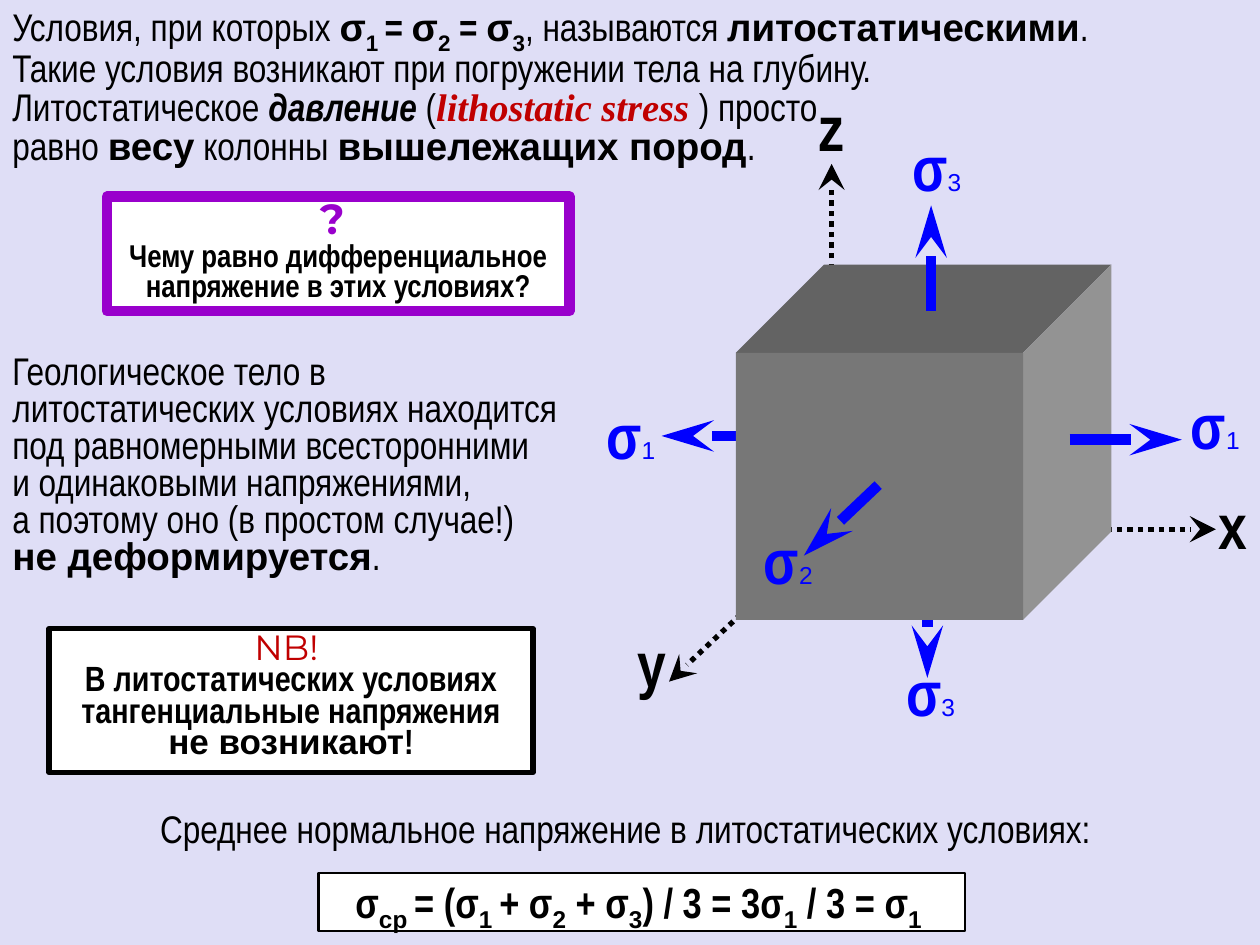
from lxml.etree import SubElement
from pptx import Presentation
from pptx.dml.color import RGBColor
from pptx.enum.dml import MSO_LINE
from pptx.enum.shapes import MSO_CONNECTOR, MSO_SHAPE
from pptx.enum.text import MSO_ANCHOR, MSO_AUTO_SIZE, PP_ALIGN
from pptx.oxml.ns import qn
from pptx.util import Inches, Pt

# The grid has 100 columns and 75 rows
COLS, ROWS = 100, 75
WIDTH, HEIGHT = Inches(10), Inches(7.5)

BACK = RGBColor(0xDF, 0xDE, 0xF6)
BLACK = RGBColor(0, 0, 0)
WHITE = RGBColor(0xFF, 0xFF, 0xFF)
RED = RGBColor(0xC0, 0, 0)
BLUE = RGBColor(0, 0, 0xFF)
PURPLE = RGBColor(0x99, 0, 0xCC)
FRONT = RGBColor(0x77, 0x77, 0x77)
TOP = RGBColor(0x63, 0x63, 0x63)
SIDE = RGBColor(0x93, 0x93, 0x93)

# Run formats; "sub" marks a subscript
PLAIN = {"name": "Arial Narrow"}
THICK = {"name": "Arial Narrow", "bold": True}
ARIAL = {"name": "Arial", "bold": True}
SUB = {**ARIAL, "sub": True}
SLANT = {**THICK, "italic": True}
TERM = {"name": "Times New Roman", "bold": True, "italic": True, "color": RED}
HEAD = {"name": "Montserrat"}

INTRO = [
    [("Условия, при которых ", PLAIN), ("σ", ARIAL), ("1 ", SUB), ("= ", THICK),
     ("σ", ARIAL), ("2", SUB), (" = ", THICK), ("σ", ARIAL), ("3", SUB),
     (", называются ", PLAIN), ("литостатическими", ARIAL), (".", PLAIN)],
    [("Такие условия возникают при погружении тела на глубину.", PLAIN)],
    [("Литостатическое ", PLAIN), ("давление ", SLANT), ("(", PLAIN),
     ("lithostatic stress ", TERM), (") просто", PLAIN)],
    [("равно ", PLAIN), ("весу", ARIAL), (" колонны ", PLAIN),
     ("вышележащих пород", ARIAL), (".", PLAIN)],
]
BODY = [
    [("Геологическое тело в", PLAIN)],
    [("литостатических условиях находится под равномерными всесторонними", PLAIN)],
    [("и одинаковыми напряжениями,", PLAIN)],
    [("а поэтому оно (в простом случае!)", PLAIN)],
    [("не деформируется", ARIAL), (".", PLAIN)],
]
ASK = [
    [("? ", {**HEAD, "bold": True, "color": PURPLE, "size": Pt(24)})],
    [("Чему равно дифференциальное напряжение в этих условиях?", THICK)],
]
NOTE = [
    [("NB! ", {**HEAD, "color": RED})],
    [("В литостатических условиях тангенциальные напряжения ", THICK),
     ("не возникают", ARIAL), ("!", THICK)],
]
MEAN = [[("Среднее нормальное напряжение в литостатических условиях: ", PLAIN)]]
SUM = [[("σ", THICK), ("ср ", SUB), ("= (σ", THICK), ("1 ", SUB), ("+ σ", THICK),
        ("2", SUB), (" + σ", THICK), ("3", SUB), (") / 3 = 3σ", THICK), ("1", SUB),
        (" / 3 = σ", THICK), ("1 ", SUB)]]


def col(n):
    return round(WIDTH * n / COLS)


def row(n):
    return round(HEIGHT * n / ROWS)


def area(left, top, wide, high):
    return col(left), row(top), col(wide), row(high)


def write(shape, lines, size, space=1.0, align=PP_ALIGN.LEFT, wrap=True):
    frame = shape.text_frame
    frame.word_wrap = wrap
    frame.auto_size = MSO_AUTO_SIZE.SHAPE_TO_FIT_TEXT
    frame.vertical_anchor = MSO_ANCHOR.TOP
    for i, line in enumerate(lines):
        para = frame.add_paragraph() if i else frame.paragraphs[0]
        para.alignment, para.line_spacing = align, space
        for text, style in line:
            run = para.add_run()
            run.text = text
            form = {"size": Pt(size), "color": BLACK, **style}
            run.font.color.rgb = form.pop("color")
            if form.pop("sub", False):
                run.font._element.set("baseline", "-25000")
            for key, value in form.items():
                setattr(run.font, key, value)


def add_text(shapes, box, *args, **opts):
    write(shapes.add_textbox(*area(*box)), *args, **opts)


def add_panel(shapes, box, color, width, lines, size, space):
    panel = shapes.add_shape(MSO_SHAPE.RECTANGLE, *area(*box))
    paint(panel, WHITE)
    panel.line.color.rgb, panel.line.width = color, Pt(width)
    write(panel, lines, size, space, PP_ALIGN.CENTER)


def paint(shape, color):
    shape.shadow.inherit = False
    shape.fill.solid()
    shape.fill.fore_color.rgb = color
    shape.line.fill.background()


def add_arrow(shapes, ends, color, width, dash=None, head="med"):
    x1, y1, x2, y2 = ends
    arrow = shapes.add_connector(MSO_CONNECTOR.STRAIGHT, col(x1), row(y1), col(x2), row(y2))
    form = {"width": Pt(width), "dash_style": dash}
    for key, value in form.items():
        setattr(arrow.line, key, value)
    arrow.line.color.rgb = color
    SubElement(arrow.line._get_or_add_ln(), qn("a:tailEnd"), type="stealth", w=head, len="lg")
    SubElement(arrow._element.spPr, qn("a:effectLst"))


def add_mark(shapes, left, top, text, index=None):
    """Axis letter, or a blue stress sign with its index."""
    line = [(text, {**THICK, "color": BLUE if index else BLACK})]
    if index:
        line.append((index, {"name": "Arial", "size": Pt(14), "color": BLUE}))
    wide = 6.1 if index else 4.3
    add_text(shapes, (left, top, wide, 4), [line], 36, space=0.5,
             align=PP_ALIGN.CENTER, wrap=False)


def add_face(shapes, points, color):
    spots = [(col(x), row(y)) for x, y in points]
    pen = shapes.build_freeform(*spots[0])
    pen.add_line_segments(spots[1:])
    paint(pen.convert_to_shape(), color)


def add_cube(shapes, left, top, wide, high, depth):
    right, low = left + wide, top + high
    near, far = (right, top), (right + depth, top - depth)
    add_face(shapes, [(left, top), (left + depth, top - depth), far, near], TOP)
    add_face(shapes, [near, far, (right + depth, low - depth), (right, low)], SIDE)
    front = shapes.add_shape(MSO_SHAPE.RECTANGLE, *area(left, top, wide, high))
    paint(front, FRONT)


def add_scheme(shapes):
    # Axes and stresses behind the cube
    for ends in [(66.1, 41.9, 53.1, 54.1), (66.1, 42, 96.5, 42), (66, 42.2, 66, 13)]:
        add_arrow(shapes, ends, BLACK, 3, MSO_LINE.ROUND_DOT, "lg")
    for ends in [(73.6, 45.5, 73.6, 53.8), (62.2, 34.6, 52.5, 34.6)]:
        add_arrow(shapes, ends, BLUE, 6)
    add_cube(shapes, 58.4, 28, 22.8, 21.2, 7)
    # Stresses in front of the cube
    for ends in [(84.9, 34.9, 93.8, 34.9), (69.7, 38.5, 63.8, 44.1), (73.9, 24.7, 73.9, 16.3)]:
        add_arrow(shapes, ends, BLUE, 6)
    # Letters
    for left, top, text in [(95.7, 40.7, "x"), (63.8, 9.1, "z"), (49.6, 51.7, "y")]:
        add_mark(shapes, left, top, text)
    for left, top, index in [(47, 33.6, "1"), (93.4, 32.8, "1"), (71.3, 12.3, "3"),
                             (70.8, 54, "3"), (59.5, 43.5, "2")]:
        add_mark(shapes, left, top, "σ", index)


def main():
    deck = Presentation()
    deck.slide_width, deck.slide_height = WIDTH, HEIGHT
    slide = deck.slides.add_slide(deck.slide_layouts[6])
    slide.background.fill.solid()
    slide.background.fill.fore_color.rgb = BACK
    shapes = slide.shapes

    # Running text
    add_text(shapes, (0, 27.8, 45.8, 18.6), BODY, 22, 0.8)
    add_text(shapes, (0, 0, 100, 21.2), INTRO, 22, 0.85)

    # Cube with axes and stresses
    add_scheme(shapes.add_group_shape().shapes)

    # Formula and framed notes
    add_panel(shapes, (25.3, 69.3, 51.3, 4.6), BLACK, 1.5, SUM, 24, 0.85)
    add_text(shapes, (0, 63.4, 100, 4.7), MEAN, 22, align=PP_ALIGN.CENTER)
    add_panel(shapes, (3.9, 49.9, 38.4, 11.4), BLACK, 3, NOTE, 20, 0.75)
    add_panel(shapes, (8.5, 15.6, 36.7, 9.1), PURPLE, 6, ASK, 18, 0.8)
    deck.save("out.pptx")


if __name__ == "__main__":
    main()
